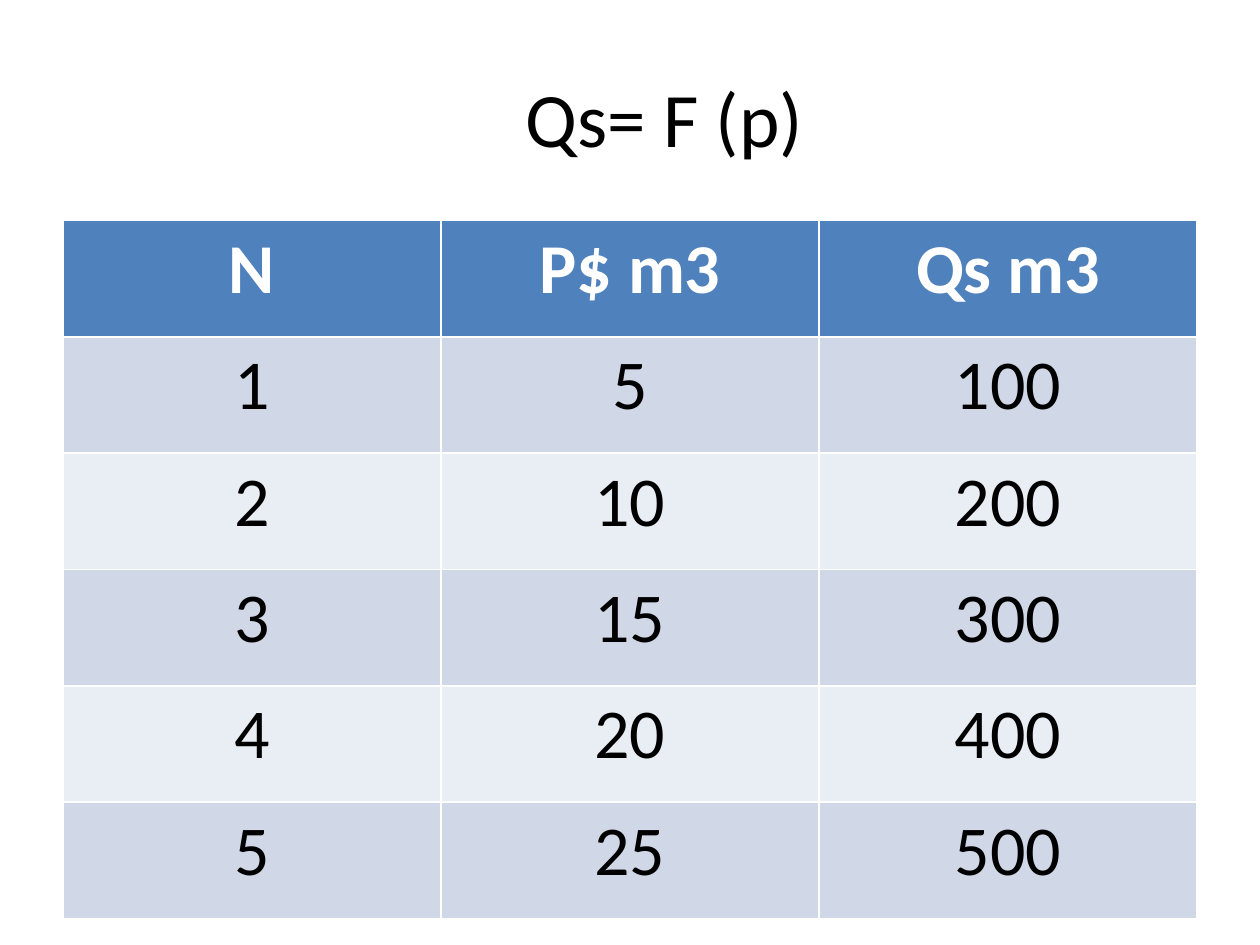
from pptx import Presentation
from pptx.dml.color import RGBColor
from pptx.enum.text import MSO_ANCHOR, PP_ALIGN
from pptx.util import Inches, Pt

COLORS = {
    "text": "000000",
    "header_text": "FFFFFF",
    "header": "4F81BD",
    "odd_row": "D0D8E8",
    "even_row": "E9EDF4",
}
FONT = "Calibri"


def format_text(paragraph, size, color, bold=False):
    paragraph.alignment = PP_ALIGN.CENTER
    for span in paragraph.runs:
        span.font.name = FONT
        span.font.size = Pt(size)
        span.font.bold = bold
        span.font.color.rgb = RGBColor.from_string(COLORS[color])


deck = Presentation()
deck.slide_width = Inches(10)
deck.slide_height = Inches(7.5)
page = deck.slides.add_slide(deck.slide_layouts[5])

title = page.shapes.title
title.left, title.top = Inches(0.5), Inches(0.3)
title.width, title.height = Inches(9), Inches(1.25)
title.text_frame.text = "Qs= F (p)"
title.text_frame.vertical_anchor = MSO_ANCHOR.MIDDLE
title.text_frame.margin_left = Inches(0.65)
format_text(title.text_frame.paragraphs[0], 44, "text")

supply = [("N", "P$ m3", "Qs m3")]
supply += [(n, 5 * n, 100 * n) for n in range(1, 6)]

table = page.shapes.add_table(
    len(supply), 3, Inches(0.5), Inches(1.75), Inches(9), Inches(5.54)
).table

for row, values in enumerate(supply):
    if row == 0:
        fill, color = "header", "header_text"
    else:
        fill, color = ("odd_row" if row % 2 else "even_row"), "text"
    for column, value in enumerate(values):
        cell = table.cell(row, column)
        cell.fill.solid()
        cell.fill.fore_color.rgb = RGBColor.from_string(COLORS[fill])
        cell.text_frame.text = str(value)
        format_text(cell.text_frame.paragraphs[0], 40, color, bold=row == 0)

deck.save("out.pptx")
